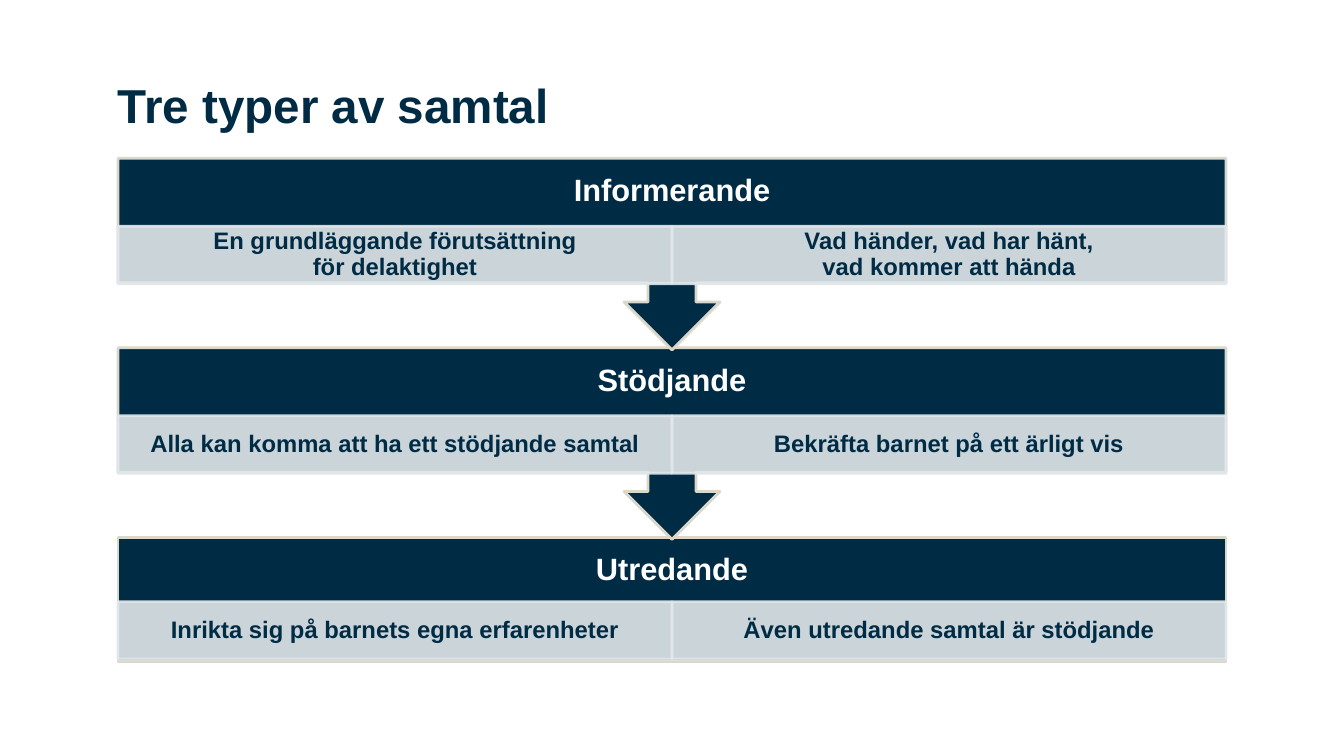
import dataclasses

import pptx
import pptx.dml.color
import pptx.enum.shapes
import pptx.enum.text
import pptx.oxml
import pptx.oxml.ns
import pptx.util

SHAPES = pptx.enum.shapes.MSO_SHAPE
ALIGN = pptx.enum.text.PP_ALIGN
ANCHOR = pptx.enum.text.MSO_ANCHOR
Inches = pptx.util.Inches


@dataclasses.dataclass(frozen=True)
class Theme:
    font: str = "Arial"
    navy: str = "002B45"
    sand: str = "DAD7CB"
    mist: str = "E1E7EA"
    white: str = "FFFFFF"
    title_size: int = 34
    heading_size: int = 22
    detail_size: int = 17
    line_width: int = 2
    detail_opacity: int = 90


THEME = Theme()

# Grid in inches: two columns, and one row for each type of conversation
LEFT, COLUMN = 1.17, 5.495
TOP, ROW = 1.57, 1.88
CALLOUT_HEIGHT, BOX_HEIGHT = 1.9, 1.23
DETAIL_HEIGHT = 0.57

CONVERSATIONS = [
    ("Informerande", ["En grundläggande förutsättning\nför delaktighet",
                      "Vad händer, vad har hänt,\nvad kommer att hända"]),
    ("Stödjande", ["Alla kan komma att ha ett stödjande samtal",
                   "Bekräfta barnet på ett ärligt vis"]),
    ("Utredande", ["Inrikta sig på barnets egna erfarenheter",
                   "Även utredande samtal är stödjande"]),
]


def rgb(value):
    return pptx.dml.color.RGBColor.from_string(value)


def write_text(shape, text, size, color, align=ALIGN.CENTER, anchor=ANCHOR.MIDDLE,
               margins=(0, 0), line_spacing=0.9):
    """Fill a shape with one bold paragraph; margins are (sides, top and bottom)."""
    frame = shape.text_frame
    frame.word_wrap = True
    frame.auto_size = pptx.enum.text.MSO_AUTO_SIZE.NONE
    frame.vertical_anchor = anchor
    frame.margin_left = frame.margin_right = Inches(margins[0])
    frame.margin_top = frame.margin_bottom = Inches(margins[1])
    paragraph = frame.paragraphs[0]
    paragraph.text = text
    paragraph.alignment = align
    paragraph.line_spacing = line_spacing
    for run in paragraph.runs:
        run.font.name = THEME.font
        run.font.size = pptx.util.Pt(size)
        run.font.bold = True
        run.font.color.rgb = rgb(color)


def add_block(slide, kind, box, fill, line, opacity=100):
    shape = slide.shapes.add_shape(kind, *map(Inches, box))
    shape.shadow.inherit = False
    shape.fill.solid()
    shape.fill.fore_color.rgb = rgb(fill)
    shape.line.color.rgb = rgb(line)
    shape.line.width = pptx.util.Pt(THEME.line_width)
    if opacity < 100:
        for color in shape._element.spPr.iter(pptx.oxml.ns.qn("a:srgbClr")):
            alpha = pptx.oxml.parse_xml(
                f'<a:alpha {pptx.oxml.ns.nsdecls("a")} val="{opacity * 1000}"/>')
            color.append(alpha)
    return shape


def add_title(slide, text):
    title = slide.shapes.title
    title.left, title.top = Inches(LEFT), Inches(0.75)
    title.width, title.height = Inches(10.15), Inches(1.42)
    write_text(title, text, THEME.title_size, THEME.navy, align=ALIGN.LEFT,
               anchor=ANCHOR.TOP, line_spacing=1.0)


def add_conversation(slide, row, heading, details, is_last):
    """Draw a heading box with its details; all but the last point to the next row."""
    top = TOP + row * ROW
    if is_last:
        kind, height, heading_share = SHAPES.RECTANGLE, BOX_HEIGHT, 0.52
    else:
        kind, height, heading_share = SHAPES.UP_ARROW_CALLOUT, CALLOUT_HEIGHT, 0.355
    block = add_block(slide, kind, (LEFT, top, 2 * COLUMN, height),
                      THEME.navy, THEME.sand)
    if not is_last:
        block.rotation = 180

    label = slide.shapes.add_textbox(*map(Inches, (LEFT, top, 2 * COLUMN, 0.67)))
    write_text(label, heading, THEME.heading_size, THEME.white, margins=(0.17, 0.17))

    for column, detail in enumerate(details):
        box = (LEFT + column * COLUMN, top + heading_share * height,
               COLUMN, DETAIL_HEIGHT)
        cell = add_block(slide, SHAPES.RECTANGLE, box, THEME.mist, THEME.mist,
                         opacity=THEME.detail_opacity)
        write_text(cell, detail, THEME.detail_size, THEME.navy, margins=(0.13, 0.02))


def main():
    presentation = pptx.Presentation()
    presentation.slide_width = Inches(13.33)
    presentation.slide_height = Inches(7.5)
    slide = presentation.slides.add_slide(presentation.slide_layouts[5])
    add_title(slide, "Tre typer av samtal")
    # Bottom row first, so that each arrow tip lies over the box below it
    last = len(CONVERSATIONS) - 1
    for row, (heading, details) in reversed(list(enumerate(CONVERSATIONS))):
        add_conversation(slide, row, heading, details, is_last=row == last)
    presentation.save("out.pptx")


if __name__ == "__main__":
    main()
